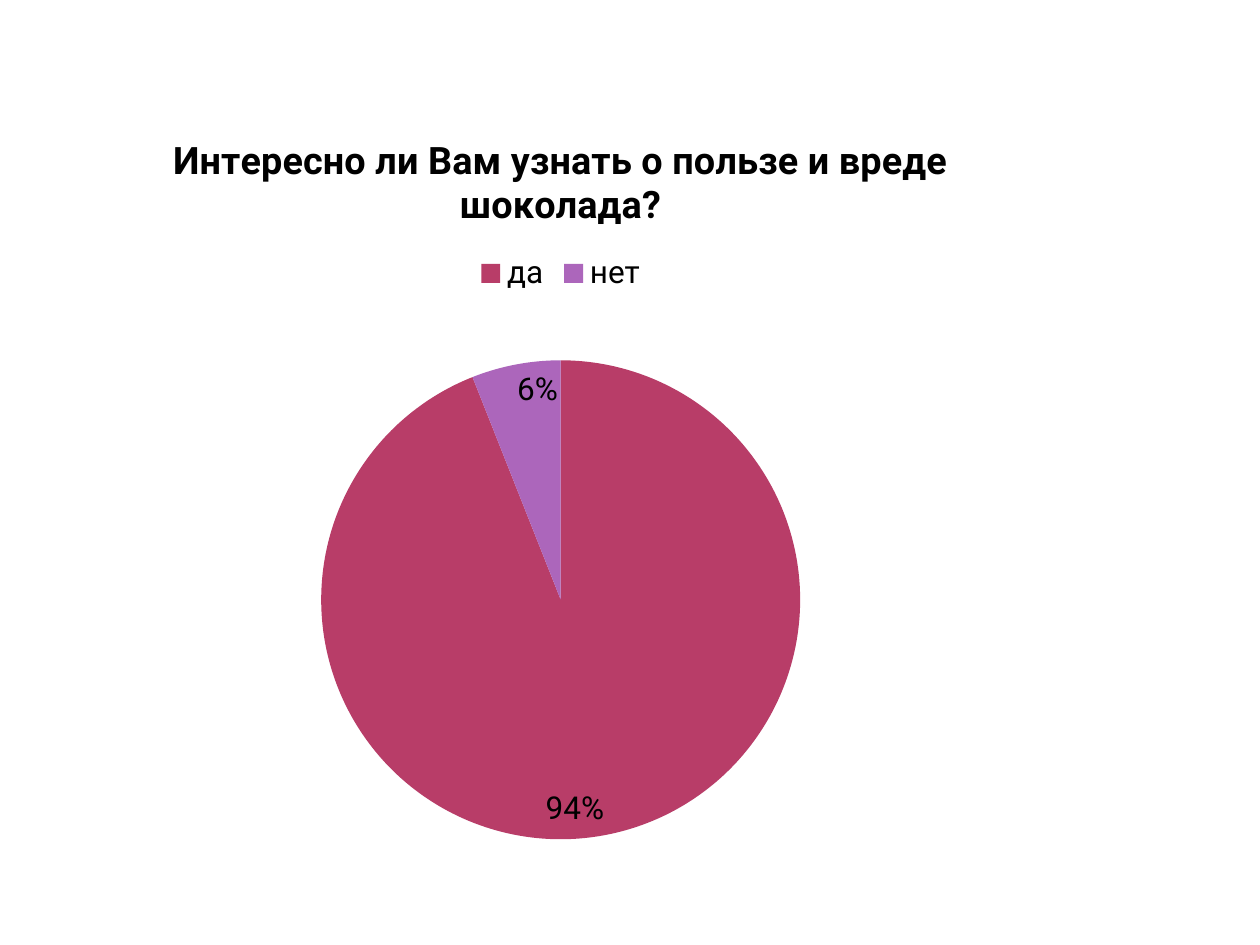
from lxml import etree
from pptx import Presentation
from pptx.chart.data import CategoryChartData
from pptx.dml.color import RGBColor
from pptx.enum.chart import XL_CHART_TYPE, XL_LABEL_POSITION, XL_LEGEND_POSITION
from pptx.oxml.ns import qn
from pptx.util import Pt

PIE = XL_CHART_TYPE.PIE
TOP = XL_LEGEND_POSITION.TOP
INSIDE_END = XL_LABEL_POSITION.INSIDE_END

QUESTION = "Интересно ли Вам узнать о пользе и вреде шоколада?"
ANSWERS = [("да", 94, "B83D68"), ("нет", 6, "AC66BB")]
FONT = "Roboto"
CHART_BOX = (8.64, 60.48, 623.52, 427.68)
PIE_LAYOUT = {"x": 0.28, "y": 0.34, "w": 0.44, "h": 0.64}


def rgb(value):
    return RGBColor.from_string(value)


def style(font, size, bold=False):
    font.name = FONT
    font.size = Pt(size)
    font.bold = bold
    font.color.rgb = rgb("000000")


def place_plot(chart, layout):
    area = chart.plots[0]._element.getparent()
    for old in area.findall(qn("c:layout")):
        area.remove(old)
    node = etree.Element(qn("c:layout"))
    area.insert(0, node)
    manual = etree.SubElement(node, qn("c:manualLayout"))
    settings = [("layoutTarget", "inner"), ("xMode", "edge"), ("yMode", "edge")]
    for tag, value in settings + list(layout.items()):
        etree.SubElement(manual, qn("c:" + tag)).set("val", str(value))


prs = Presentation()
prs.slide_width, prs.slide_height = Pt(720), Pt(540)
s = prs.slides.add_slide(prs.slide_layouts[6])

data = CategoryChartData()
data.categories = [name for name, _, _ in ANSWERS]
data.add_series(QUESTION, [value for _, value, _ in ANSWERS])
chart = s.shapes.add_chart(PIE, *map(Pt, CHART_BOX), data).chart
style(chart.font, 18)

chart.has_title = True
tf = chart.chart_title.text_frame
tf.text = QUESTION
style(tf.paragraphs[0].runs[0].font, 21.6, True)
chart.chart_title.include_in_layout = False

chart.has_legend = True
chart.legend.position = TOP
chart.legend.include_in_layout = False
style(chart.legend.font, 18)

plot = chart.plots[0]
plot.vary_by_categories = True
for i, (_, _, color) in enumerate(ANSWERS):
    fill = plot.series[0].points[i].format.fill
    fill.solid()
    fill.fore_color.rgb = rgb(color)

plot.has_data_labels = True
labels = plot.data_labels
labels.show_percentage = True
labels.show_value = False
labels.number_format = "0%"
labels.number_format_is_linked = False
labels.position = INSIDE_END
style(labels.font, 18)
place_plot(chart, PIE_LAYOUT)

prs.save("out.pptx")
